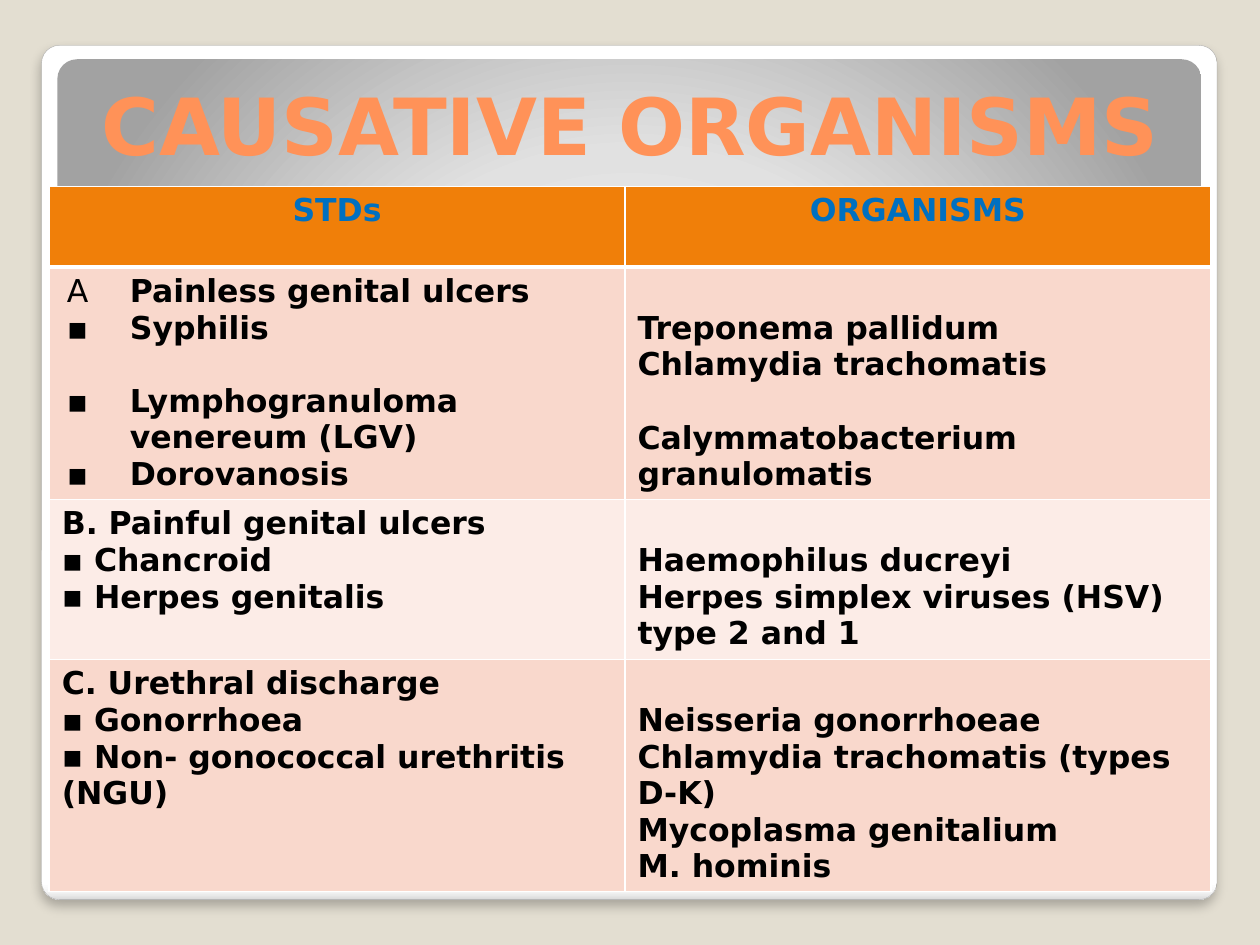
from dataclasses import dataclass
from lxml.etree import SubElement
from pptx import Presentation
from pptx.dml.color import RGBColor
from pptx.enum.shapes import MSO_SHAPE
from pptx.enum.text import MSO_ANCHOR, PP_ALIGN
from pptx.oxml import parse_xml
from pptx.oxml.ns import nsdecls, qn
from pptx.util import Emu, Inches, Pt


@dataclass(frozen=True)
class Theme:
    font: str = "DejaVu Sans"
    background: str = "E3DED1"
    title: str = "FF9258"
    header: str = "0070C0"
    header_fill: str = "F07F09"
    body: str = "000000"
    bands: tuple = ("F9D8CC", "FCECE7")
    border: str = "FFFFFF"
    panel_line: str = "A4A4A4"
    title_size: int = 45
    body_size: int = 18
    line_pitch: int = 21


T = Theme()
NUMBERED = {"marL": Inches(0.54), "indent": -Inches(0.5)}
FLUSH = {"marL": 0, "indent": 0}

# Each line: text, bullet, indents, blank lines above it
ROWS = [
    (1.83,
     [("Painless genital ulcers", "A.", NUMBERED, 0),
      ("Syphilis", "▪", NUMBERED, 0),
      ("Lymphogranuloma venereum (LGV)", "▪", NUMBERED, 1),
      ("Dorovanosis", "▪", NUMBERED, 0)],
     [("Treponema pallidum", None, FLUSH, 1),
      ("Chlamydia trachomatis", None, FLUSH, 0),
      ("Calymmatobacterium granulomatis", None, FLUSH, 1)]),
    (1.27,
     [("B. Painful genital ulcers", None, FLUSH, 0),
      (" Chancroid", "▪", FLUSH, 0),
      (" Herpes genitalis", "▪", FLUSH, 0)],
     [("Haemophilus ducreyi", None, FLUSH, 1),
      ("Herpes simplex viruses (HSV) type 2 and 1", None, FLUSH, 0)]),
    (1.83,
     [("C. Urethral discharge", None, FLUSH, 0),
      (" Gonorrhoea", "▪", FLUSH, 0),
      (" Non- gonococcal urethritis (NGU)", "▪", FLUSH, 0)],
     [("Neisseria gonorrhoeae", None, FLUSH, 1),
      ("Chlamydia trachomatis (types D-K)", None, FLUSH, 0),
      ("Mycoplasma genitalium", None, FLUSH, 0),
      ("M. hominis", None, FLUSH, 0)]),
]


def set_font(font, size, color):
    for name, value in {"name": T.font, "size": Pt(size), "bold": True}.items():
        setattr(font, name, value)
    font.color.rgb = RGBColor.from_string(color)


def add_card(s, box, radius, stops, direction):
    """Add a rounded box with a gradient; direction is its a:lin or a:path element."""
    sp = s.shapes.add_shape(MSO_SHAPE.ROUNDED_RECTANGLE, *box)
    sp.adjustments[0] = radius
    sp.shadow.inherit = False
    sp.line.fill.background()
    marks = "".join(f'<a:gs pos="{pos * 1000}"><a:srgbClr val="{color}"/></a:gs>'
                    for pos, color in stops)
    geometry = sp._element.spPr.find(qn("a:prstGeom"))
    geometry.addnext(parse_xml(f'<a:gradFill {nsdecls("a")} rotWithShape="1">'
                               f'<a:gsLst>{marks}</a:gsLst>{direction}</a:gradFill>'))
    return sp


def add_frame(s, box):
    """Draw the white panel and the grey band at its top."""
    x, y, w, h = box
    panel = add_card(s, box, 0.021,
                     [(0, "FFFFFF"), (98, "FFFFFF"), (99, "F7F7F7"), (100, "DADADA")],
                     '<a:lin ang="5400000" scaled="0"/>')
    panel.line.color.rgb = RGBColor.from_string(T.panel_line)
    panel.line.width = Pt(0.16)
    effects = panel._element.spPr.find(qn("a:effectLst"))
    effects.append(parse_xml(
        f'<a:outerShdw {nsdecls("a")} blurRad="{Pt(6)}" dist="{Pt(4)}" dir="5400000" '
        'algn="t" rotWithShape="0"><a:srgbClr val="000000"><a:alpha val="25000"/>'
        '</a:srgbClr></a:outerShdw>'))
    inset = Inches(0.125)
    add_card(s, (x + inset, y + Inches(0.11), w - 2 * inset, Emu(h // 2)), 0.046,
             [(0, "FFFFFF"), (55, "E1E1E1"), (100, "A2A2A2")],
             '<a:path path="circle"><a:fillToRect l="50000" t="175000" '
             'r="50000" b="-75000"/></a:path>')


def add_title(s, box, text):
    title = s.shapes.title
    s.shapes._spTree.append(title._element)
    title.left, title.top, title.width, title.height = box
    tf = title.text_frame
    tf.text = text
    margins = dict.fromkeys(
        ("margin_left", "margin_top", "margin_right", "margin_bottom"), Inches(0.05))
    for name, value in {**margins, "word_wrap": True,
                        "vertical_anchor": MSO_ANCHOR.BOTTOM}.items():
        setattr(tf, name, value)
    p = tf.paragraphs[0]
    p.alignment = PP_ALIGN.CENTER
    set_font(p.runs[0].font, T.title_size, T.title)


def style_cell(cell, fill, bottom=1):
    cell.fill.solid()
    cell.fill.fore_color.rgb = RGBColor.from_string(fill)
    tcPr = cell._tc.get_or_add_tcPr()
    for i, (side, width) in enumerate(zip("LRTB", (1, 1, 1, bottom))):
        tcPr.insert(i, parse_xml(
            f'<a:ln{side} {nsdecls("a")} w="{Pt(width)}"><a:solidFill>'
            f'<a:srgbClr val="{T.border}"/></a:solidFill></a:ln{side}>'))


def fill_cell(cell, lines):
    tf = cell.text_frame
    for i, (text, bullet, indents, gap) in enumerate(lines):
        p = tf.paragraphs[0] if i == 0 else tf.add_paragraph()
        pPr = p._p.get_or_add_pPr()
        for name, value in indents.items():
            pPr.set(name, str(int(value)))
        if bullet:
            SubElement(pPr, qn("a:buFont"), typeface=T.font)
            SubElement(pPr, qn("a:buChar"), char=bullet)
        if gap and i == 0:
            cell.margin_top = Inches(0.05) + Pt(gap * T.line_pitch)
        elif gap:
            p.space_before = Pt(gap * T.line_pitch)
        r = p.add_run()
        r.text = text
        set_font(r.font, T.body_size, T.body)


def add_organisms_table(s, box, headings):
    table = s.shapes.add_table(len(ROWS) + 1, len(headings), *box).table
    for col, width in zip(table.columns, (4.57, 4.65)):
        col.width = Inches(width)
    for row, height in zip(table.rows, (0.64, *(row[0] for row in ROWS))):
        row.height = Inches(height)
    for cell, text in zip(table.rows[0].cells, headings):
        style_cell(cell, T.header_fill, bottom=3)
        cell.text = text
        p = cell.text_frame.paragraphs[0]
        p.alignment = PP_ALIGN.CENTER
        set_font(p.runs[0].font, T.body_size, T.header)
    for i, (_, *columns) in enumerate(ROWS):
        for cell, lines in zip(table.rows[i + 1].cells, columns):
            style_cell(cell, T.bands[i % 2])
            fill_cell(cell, lines)


def main():
    prs = Presentation()
    prs.slide_width, prs.slide_height = Inches(10), Inches(7.5)
    s = prs.slides.add_slide(prs.slide_layouts[5])
    s.background.fill.solid()
    s.background.fill.fore_color.rgb = RGBColor.from_string(T.background)
    left, width = Inches(0.39), Inches(9.22)
    add_frame(s, (Inches(0.33), Inches(0.36), Inches(9.33), Inches(6.78)))
    add_title(s, (left, Inches(0.39), width, Inches(1.02)), "CAUSATIVE ORGANISMS")
    add_organisms_table(s, (left, Inches(1.48), width, Inches(5.57)),
                        ("STDs", "ORGANISMS"))
    prs.save("out.pptx")


if __name__ == "__main__":
    main()
